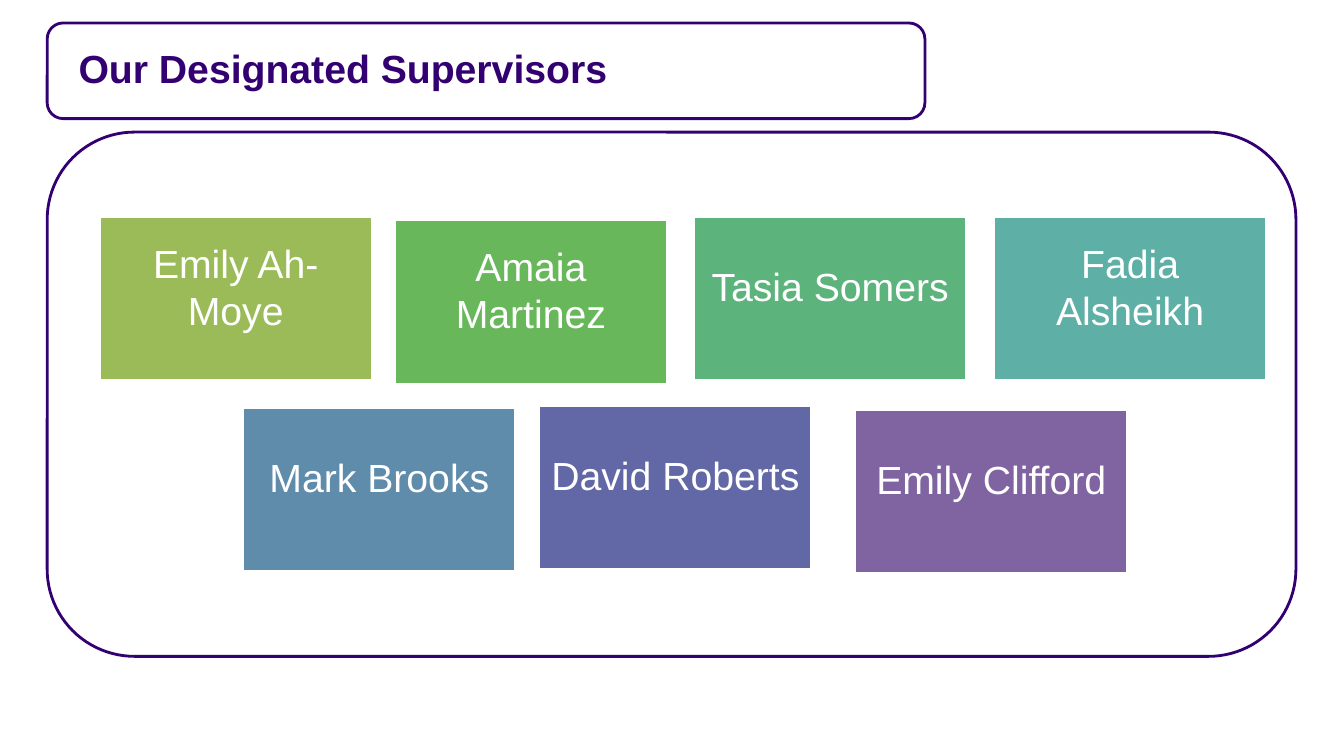
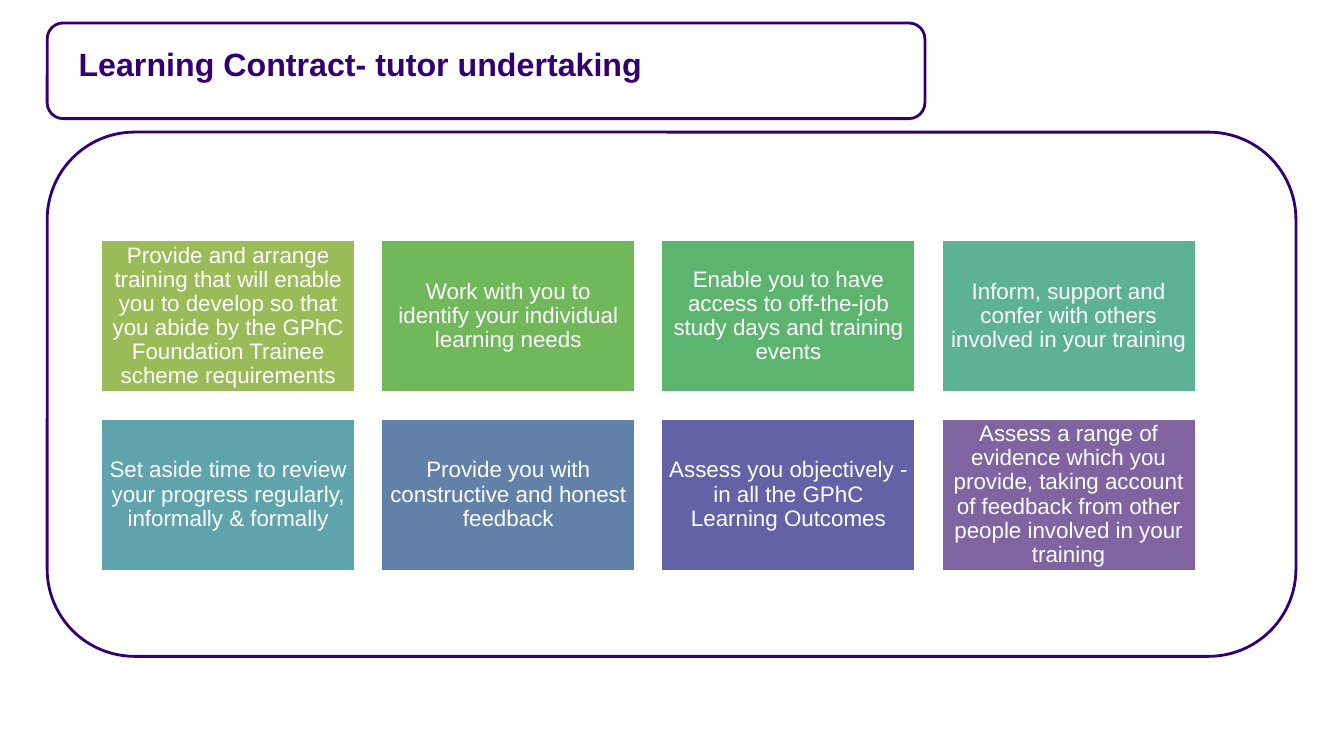
"""Build two slides on designated supervisors and the tutor's learning contract."""
from pptx import Presentation
from pptx.dml.color import RGBColor
from pptx.enum import shapes, text
from pptx.util import Cm, Pt

PURPLE, WHITE = "330072", "FFFFFF"
FONT = "Arial"


def rgb(color):
    return RGBColor.from_string(color)


def write(tf, words, size, color=WHITE, bold=False, align=text.PP_ALIGN.CENTER,
          anchor=text.MSO_ANCHOR.MIDDLE, spacing=1.0, insets=(0.25, 0.13, 0.25, 0.13)):
    tf.word_wrap = True
    tf.auto_size = text.MSO_AUTO_SIZE.NONE
    tf.vertical_anchor = anchor
    tf.margin_left, tf.margin_top, tf.margin_right, tf.margin_bottom = map(Cm, insets)
    p = tf.paragraphs[0]
    p.alignment = align
    p.line_spacing = spacing
    r = p.add_run()
    r.text = words
    r.font.name = FONT
    r.font.size = Pt(size)
    r.font.bold = bold
    r.font.color.rgb = rgb(color)


supervisors = [
    ("Emily Ah-Moye", "9BBB59", 2.5, 5.46),
    ("Amaia Martinez", "69B75B", 9.94, 5.54),
    ("Tasia Somers", "5CB37C", 17.48, 5.46),
    ("Fadia Alsheikh", "5EAFA6", 25.04, 5.46),
    ("Mark Brooks", "608CAB", 6.12, 10.26),
    ("David Roberts", "6267A6", 13.58, 10.21),
    ("Emily Clifford", "8064A2", 21.54, 10.31),
]
duties = [
    ("Provide and arrange training that will enable you to develop so that you abide "
     "by the GPhC Foundation Trainee scheme requirements", "9BBB59"),
    ("Work with you to identify your individual learning needs", "70B85A"),
    ("Enable you to have access to off-the-job study days and training events", "5CB46F"),
    ("Inform, support and confer with others involved in your training", "5DB195"),
    ("Set aside time to review your progress regularly, informally & formally", "5FA4AD"),
    ("Provide you with constructive and honest feedback", "6181A9"),
    ("Assess you objectively - in all the GPhC Learning Outcomes", "6362A6"),
    ("Assess a range of evidence which you provide, taking account of feedback from "
     "other people involved in your training", "8064A2"),
]
left, top, step_x, step_y, columns = 2.54, 6.04, 7.06, 4.5, 4
duty_cards = [(words, color, left + i % columns * step_x, top + i // columns * step_y)
              for i, (words, color) in enumerate(duties)]

slides = [
    ("Our Designated Supervisors", 28, supervisors, (6.88, 4.14),
     dict(size=28, insets=(0.3, 0.3, 0.3, 0.94))),
    ("Learning Contract- tutor undertaking", 23, duty_cards, (6.42, 3.86),
     dict(size=16, spacing=0.9, insets=(0.18, 0.18, 0.18, 0.18))),
]

prs = Presentation()
prs.slide_width, prs.slide_height = Cm(33.87), Cm(19.05)
layout = prs.slide_layouts.get_by_name("Title Only")
title = layout.placeholders[0]
title.left, title.top, title.width, title.height = Cm(1.73), Cm(0.99), Cm(21.06), Cm(1.52)

for number, (heading, heading_size, cards, (width, height), style) in enumerate(slides):
    s = prs.slides.add_slide(layout)
    write(s.shapes.title.text_frame, heading, heading_size, color=PURPLE, bold=True,
          align=text.PP_ALIGN.LEFT, anchor=text.MSO_ANCHOR.TOP)

    if number == 0:
        frames = [(1.19, 3.33, 31.47, 13.21), (1.19, 0.58, 22.12, 2.41)]
        for frame_id, box in enumerate(frames, 20):
            sp = s.shapes.add_shape(shapes.MSO_SHAPE.ROUNDED_RECTANGLE, *map(Cm, box))
            sp.shadow.inherit = False
            sp.fill.solid()
            sp.fill.fore_color.rgb = rgb(WHITE)
            sp.line.color.rgb = rgb(PURPLE)
            sp.line.width = Pt(2)
            sp.element.nvSpPr.cNvPr.set("id", str(frame_id))
            layout.shapes.element.append(sp.element)

    for words, color, x, y in cards:
        sp = s.shapes.add_shape(shapes.MSO_SHAPE.RECTANGLE, Cm(x), Cm(y), Cm(width), Cm(height))
        sp.shadow.inherit = False
        sp.fill.solid()
        sp.fill.fore_color.rgb = rgb(color)
        sp.line.color.rgb = rgb(WHITE)
        sp.line.width = Pt(2)
        write(sp.text_frame, words, **style)

prs.save("out.pptx")
